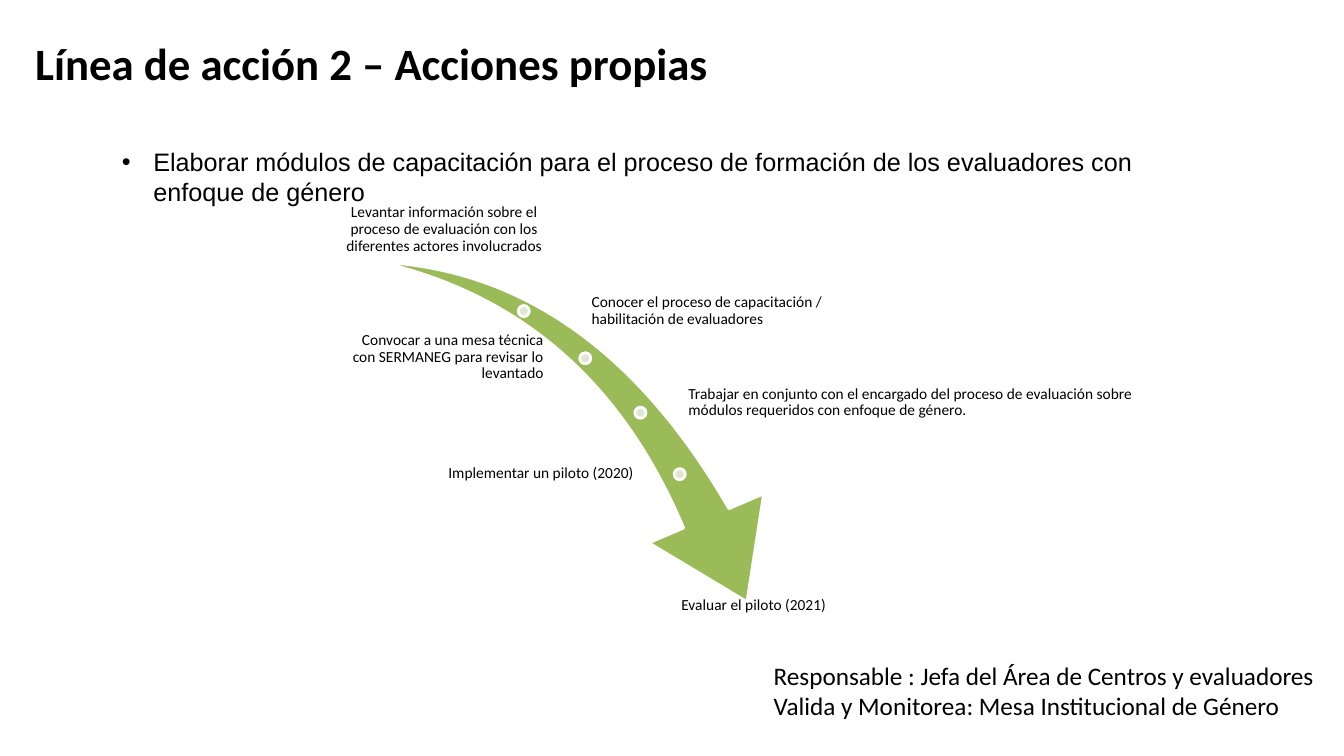
from dataclasses import dataclass

from lxml import etree
from pptx import Presentation
from pptx.dml.color import RGBColor
from pptx.enum.shapes import MSO_SHAPE
from pptx.enum.text import MSO_ANCHOR, MSO_AUTO_SIZE, PP_ALIGN
from pptx.oxml.ns import qn
from pptx.shapes.autoshape import Shape
from pptx.slide import Slide
from pptx.util import Cm, Pt

LEFT, CENTER, RIGHT = PP_ALIGN.LEFT, PP_ALIGN.CENTER, PP_ALIGN.RIGHT
TOP, MIDDLE, BOTTOM = MSO_ANCHOR.TOP, MSO_ANCHOR.MIDDLE, MSO_ANCHOR.BOTTOM
FIXED, GROW = MSO_AUTO_SIZE.NONE, MSO_AUTO_SIZE.SHAPE_TO_FIT_TEXT
ELLIPSE, SWOOSH = MSO_SHAPE.OVAL, MSO_SHAPE.SWOOSH_ARROW


@dataclass(frozen=True)
class Theme:
    ink: RGBColor = RGBColor(0x00, 0x00, 0x00)
    outline: RGBColor = RGBColor(0xFF, 0xFF, 0xFF)
    arrow: RGBColor = RGBColor(0x9B, 0xBB, 0x59)
    dot: RGBColor = RGBColor(0xDE, 0xE7, 0xD1)
    font: str = "Calibri"
    list_font: str = "Arial"
    title_size: int = 32
    body_size: int = 18
    label_size: int = 11
    outline_width: int = 2


@dataclass(frozen=True)
class Step:
    text: str
    left: float
    top: float
    width: float
    align: PP_ALIGN = LEFT
    anchor: MSO_ANCHOR = MIDDLE


THEME = Theme()
LABEL_HEIGHT = 2.01
LABEL_INSET = 0.05
DOT_SIZE = 0.28
BULLET_INDENT = 0.79

STEPS = [
    Step("Levantar información sobre el proceso de evaluación con los diferentes "
         "actores involucrados", 8.64, 4.45, 5.11, CENTER, BOTTOM),
    Step("Conocer el proceso de capacitación / habilitación de evaluadores",
         14.86, 6.83, 7.59),
    Step("Convocar a una mesa técnica con SERMANEG para revisar lo levantado",
         8.64, 8.0, 5.11, RIGHT),
    Step("Trabajar en conjunto con el encargado del proceso de evaluación sobre "
         "módulos requeridos con enfoque de género.", 17.3, 9.14, 11.56),
    Step("Implementar un piloto (2020)", 7.54, 10.92, 8.48, RIGHT),
    Step("Evaluar el piloto (2021)", 15.54, 15.01, 6.91, CENTER, TOP),
]
DOTS = [(13.06, 7.7), (14.61, 8.89), (16.0, 10.26), (16.99, 11.81)]


def place(box: Shape, left: float, top: float, width: float, height: float) -> None:
    box.left, box.top, box.width, box.height = map(Cm, (left, top, width, height))


def write(box: Shape, *lines: str, size: int, font: str = THEME.font,
          bold: bool = False, align: PP_ALIGN = LEFT, anchor: MSO_ANCHOR = TOP,
          spacing: float = 1.0, inset: float | None = None, wrap: bool = True,
          fit: MSO_AUTO_SIZE = FIXED, bullet: str = "") -> None:
    """Fill a box with one paragraph per line, all in the same format."""
    frame = box.text_frame
    frame.text = "\n".join(lines)
    frame.word_wrap, frame.auto_size, frame.vertical_anchor = wrap, fit, anchor
    if inset is not None:
        frame.margin_left = frame.margin_right = Cm(inset)
        frame.margin_top = frame.margin_bottom = Cm(inset)
    for para in frame.paragraphs:
        if bullet:
            add_bullet(para._p.get_or_add_pPr(), bullet)
        para.alignment, para.line_spacing = align, spacing
        para.space_before = Pt(0)
        for span in para.runs:
            span.font.name, span.font.size, span.font.bold = font, Pt(size), bold
            span.font.color.rgb = THEME.ink


def add_bullet(properties: etree._Element, bullet: str) -> None:
    properties.set("marL", str(Cm(BULLET_INDENT)))
    properties.set("indent", str(-Cm(BULLET_INDENT)))
    etree.SubElement(properties, qn("a:buFont")).set("typeface", THEME.list_font)
    etree.SubElement(properties, qn("a:buChar")).set("char", bullet)


def add_outlined(page: Slide, kind: MSO_SHAPE, left: float, top: float,
                 width: float, height: float, fill: RGBColor) -> Shape:
    shape = page.shapes.add_shape(kind, *map(Cm, (left, top, width, height)))
    shape.shadow.inherit = False
    shape.fill.solid()
    shape.fill.fore_color.rgb = fill
    shape.line.color.rgb = THEME.outline
    shape.line.width = Pt(THEME.outline_width)
    return shape


def add_box(page: Slide, left: float, top: float, width: float, height: float) -> Shape:
    return page.shapes.add_textbox(*map(Cm, (left, top, width, height)))


def add_path_of_steps(page: Slide) -> None:
    arrow = add_outlined(page, SWOOSH, 9.35, 6.93, 10.85, 7.57, THEME.arrow)
    arrow.rotation = 73.3
    arrow.adjustments[0], arrow.adjustments[1] = 0.163, 0.314
    for left, top in DOTS:
        add_outlined(page, ELLIPSE, left, top, DOT_SIZE, DOT_SIZE, THEME.dot)
    for step in STEPS:
        label = add_box(page, step.left, step.top, step.width, LABEL_HEIGHT)
        write(label, step.text, size=THEME.label_size, align=step.align,
              anchor=step.anchor, spacing=0.9, inset=LABEL_INSET)


def main() -> None:
    deck = Presentation()
    deck.slide_width, deck.slide_height = Cm(33.87), Cm(19.05)
    page = deck.slides.add_slide(deck.slide_layouts[1])

    title, body = page.shapes.title, page.placeholders[1]
    place(title, -5.87, 0, 30.48, 3.18)
    write(title, "Línea de acción 2 – Acciones propias", size=THEME.title_size,
          bold=True, align=CENTER, anchor=MIDDLE)
    place(body, 2.82, 3.56, 27.69, 1.8)
    write(body, "Elaborar módulos de capacitación para el proceso de formación de los "
          "evaluadores con enfoque de género", size=THEME.body_size,
          font=THEME.list_font, fit=GROW, bullet="•")

    add_path_of_steps(page)

    owners = add_box(page, 19.25, 16.51, 14.3, 1.8)
    write(owners, "Responsable : Jefa del Área de Centros y evaluadores",
          "Valida y Monitorea: Mesa Institucional de Género",
          size=THEME.body_size, wrap=False, fit=GROW)
    deck.save("out.pptx")


if __name__ == "__main__":
    main()
